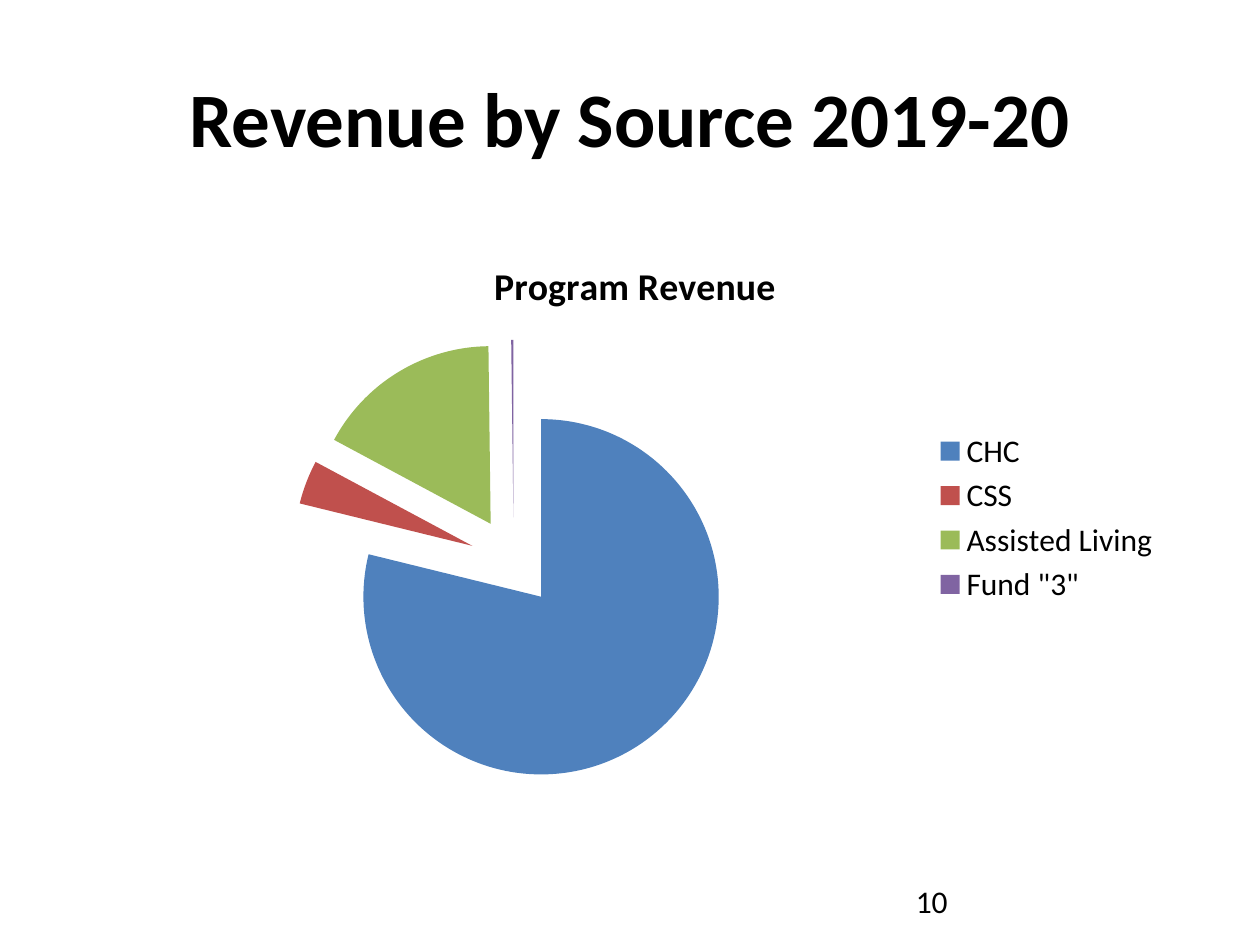
from dataclasses import dataclass

from lxml.etree import Element
from pptx import Presentation
from pptx.chart.data import CategoryChartData
from pptx.dml.color import RGBColor
from pptx.enum.chart import XL_CHART_TYPE, XL_LEGEND_POSITION
from pptx.enum.text import MSO_ANCHOR, PP_ALIGN
from pptx.oxml.ns import qn
from pptx.util import Pt

PX = 9144  # EMU per px, at 100 px to the inch


@dataclass(frozen=True)
class Theme:
    font: str = "Calibri"
    ink: str = "000000"
    slices: tuple = ("4F81BD", "C0504D", "9BBB59", "8064A2")
    heading_size: float = 44
    chart_title_size: float = 21.6
    body_size: float = 18


THEME = Theme()
REVENUE = {"CHC": 79, "CSS": 4, "Assisted Living": 17, 'Fund "3"': 0.2}
EXPLOSION = 25


def emu(box):
    return [length * PX for length in box]


def style_font(font, size, bold=False):
    font.name = THEME.font
    font.size = Pt(size)
    font.bold = bold
    font.color.rgb = RGBColor.from_string(THEME.ink)


def add_label(slide, box, wording, size, bold=False,
              align=PP_ALIGN.LEFT, anchor=MSO_ANCHOR.TOP):
    frame = slide.shapes.add_textbox(*emu(box)).text_frame
    frame.word_wrap = True
    frame.vertical_anchor = anchor
    frame.text = wording
    line = frame.paragraphs[0]
    line.alignment = align
    style_font(line.runs[0].font, size, bold)


def add_revenue_pie(slide, box):
    revenue_data = CategoryChartData()
    revenue_data.categories = list(REVENUE)
    revenue_data.add_series("Program Revenue", list(REVENUE.values()))
    pie = slide.shapes.add_chart(XL_CHART_TYPE.PIE, *emu(box), revenue_data).chart
    style_font(pie.font, THEME.body_size)

    # Title
    pie.has_title = True
    heading = pie.chart_title.text_frame
    heading.text = "Program Revenue"
    style_font(heading.paragraphs[0].runs[0].font, THEME.chart_title_size, bold=True)

    # Legend
    pie.has_legend = True
    pie.legend.position = XL_LEGEND_POSITION.RIGHT
    pie.legend.include_in_layout = False
    style_font(pie.legend.font, THEME.body_size)

    # Slices, pulled apart
    plot = pie.plots[0]
    plot.vary_by_categories = True
    revenue = plot.series[0]
    explosion = Element(qn("c:explosion"), val=str(EXPLOSION))
    revenue._element.find(qn("c:tx")).addnext(explosion)
    for index, color in enumerate(THEME.slices):
        fill = revenue.points[index].format.fill
        fill.solid()
        fill.fore_color.rgb = RGBColor.from_string(color)


def build_revenue_slide(deck):
    slide = deck.slides.add_slide(deck.slide_layouts[6])
    # Heading
    add_label(slide, (50, 30, 900, 125), "Revenue by Source 2019-20",
              THEME.heading_size, True, PP_ALIGN.CENTER, MSO_ANCHOR.MIDDLE)
    # Chart
    add_revenue_pie(slide, (77, 186, 854, 450))
    # Page number
    add_label(slide, (717, 695, 233, 40), "10", THEME.body_size)


def main():
    deck = Presentation()
    deck.slide_width, deck.slide_height = emu((1000, 750))
    build_revenue_slide(deck)
    deck.save("out.pptx")


if __name__ == "__main__":
    main()
